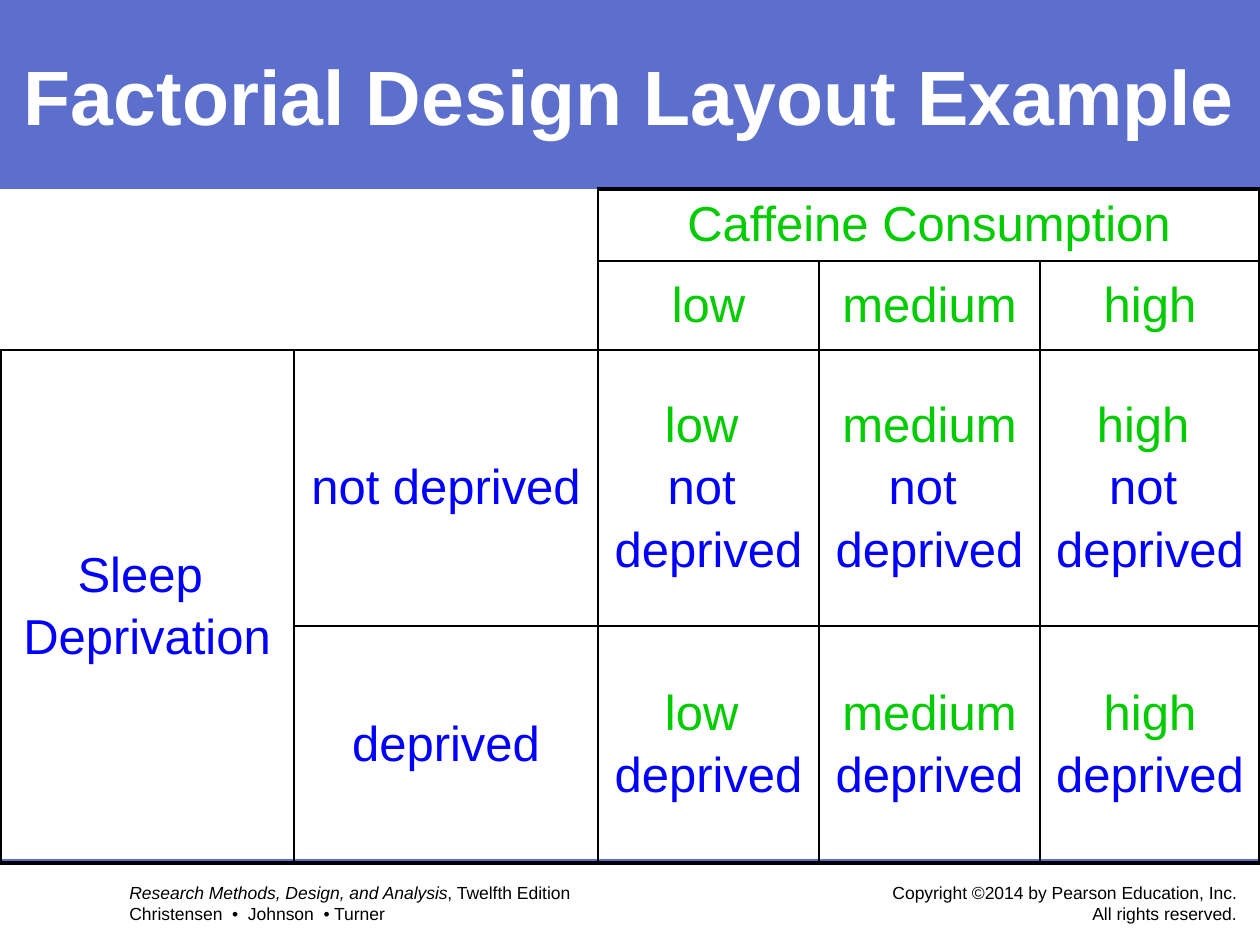
from pptx import Presentation
from pptx.dml.color import RGBColor
from pptx.enum.shapes import MSO_CONNECTOR
from pptx.enum.text import MSO_ANCHOR, MSO_AUTO_SIZE, PP_ALIGN
from pptx.oxml import parse_xml
from pptx.oxml.ns import nsdecls
from pptx.util import Pt
from lxml import etree

MIDDLE, TOP = MSO_ANCHOR.MIDDLE, MSO_ANCHOR.TOP
LEFT, CENTER, RIGHT = PP_ALIGN.LEFT, PP_ALIGN.CENTER, PP_ALIGN.RIGHT
STRAIGHT = MSO_CONNECTOR.STRAIGHT
NO_AUTOFIT = MSO_AUTO_SIZE.NONE

PX = 914400 / 126
FONT = "Arial"
BAND, WHITE, BLACK, GREEN, BLUE = "5C6FCC", "FFFFFF", "000000", "00CC00", "0000FF"
THIN, THICK = 1, 2.25

TITLE = "Factorial Design Layout Example"
BOOK = "Research Methods, Design, and Analysis"
FOOTERS = [
    ((117, 876, 650, 54), LEFT, TOP,
     [[(BOOK, True), (", Twelfth Edition", False)],
      [("Christensen  •  Johnson  • Turner", False)]]),
    ((829, 871, 420, 64), RIGHT, MIDDLE,
     [[("Copyright ©2014 by Pearson Education, Inc.", False)],
      [("All rights reserved.", False)]]),
]

COLUMNS = [294, 304, 221, 221, 220]
ROWS = [72, 89, 276, 237]
TABLE_TOP = 189
MERGES = [((0, 2), (0, 4)), ((2, 0), (3, 0))]
NOT_DEPRIVED = [("not ", BLUE), ("deprived", BLUE)]
DEPRIVED = [("deprived", BLUE)]
CELLS = [
    [[], [], [("Caffeine Consumption", GREEN)], [], []],
    [[], [], [("low", GREEN)], [("medium", GREEN)], [("high", GREEN)]],
    [[("Sleep ", BLUE), ("Deprivation", BLUE)], [("not deprived", BLUE)]]
    + [[(level, GREEN)] + NOT_DEPRIVED for level in ("low ", "medium", "high ")],
    [[], DEPRIVED]
    + [[(level, GREEN)] + DEPRIVED for level in ("low ", "medium", "high")],
]


def px(length):
    return round(length * PX)


def color(value):
    return RGBColor.from_string(value)


def style(font, size, value, bold=False, italic=False):
    font.name, font.size, font.bold, font.italic = FONT, Pt(size), bold, italic
    font.color.rgb = color(value)


def region(row, column):
    if not (0 <= row < len(ROWS) and 0 <= column < len(COLUMNS)):
        return "outside"
    if row < 2 and column < 2:
        return "blank"
    for (top, left), (bottom, right) in MERGES:
        if top <= row <= bottom and left <= column <= right:
            return top, left
    return row, column


def edge_width(here, there):
    if here == there or {here, there} == {"blank", "outside"}:
        return 0
    return THICK if there == "outside" else THIN


def set_borders(cell, row, column):
    neighbours = [
        ("lnL", row, column - 1),
        ("lnR", row, column + cell.span_width),
        ("lnT", row - 1, column),
        ("lnB", row + cell.span_height, column),
    ]
    properties = cell._tc.get_or_add_tcPr()
    for index, (tag, next_row, next_column) in enumerate(neighbours):
        width = edge_width(region(row, column), region(next_row, next_column))
        paint = (f'<a:solidFill><a:srgbClr val="{BLACK}"/></a:solidFill>'
                 if width else "<a:noFill/>")
        properties.insert(index, parse_xml(
            f'<a:{tag} {nsdecls("a")} w="{Pt(width)}">{paint}</a:{tag}>'))


def add_title(slide):
    title = slide.shapes.title
    title.left, title.top, title.width, title.height = 0, 0, px(1260), px(189)
    title.fill.solid()
    title.fill.fore_color.rgb = color(BAND)
    frame = title.text_frame
    frame.text = TITLE
    frame.word_wrap = True
    frame.auto_size = NO_AUTOFIT
    frame.vertical_anchor = MIDDLE
    frame.paragraphs[0].alignment = CENTER
    style(frame.paragraphs[0].runs[0].font, 44, WHITE, bold=True)


def add_footer(slide, box, alignment, anchor, lines):
    frame = slide.shapes.add_textbox(*map(px, box)).text_frame
    frame.word_wrap = True
    frame.vertical_anchor = anchor
    for index, line in enumerate(lines):
        paragraph = frame.add_paragraph() if index else frame.paragraphs[0]
        paragraph.alignment = alignment
        for text, italic in line:
            run = paragraph.add_run()
            run.text = text
            style(run.font, 10, BLACK, italic=italic)


def add_footer_rule(slide):
    rule = slide.shapes.add_connector(STRAIGHT, 0, px(861), px(1260), px(861))
    rule.line.color.rgb = color(BAND)
    rule.line.width = Pt(THICK)
    properties = rule._element.spPr
    etree.SubElement(properties, "{http://schemas.openxmlformats.org/drawingml/2006/main}effectLst")


def fill_cell(cell, lines):
    cell.fill.background()
    cell.vertical_anchor = MIDDLE
    frame = cell.text_frame
    frame.text = "\n".join(text for text, _ in lines)
    for index, (paragraph, (_, value)) in enumerate(zip(frame.paragraphs, lines)):
        paragraph.alignment = CENTER
        paragraph.space_before = Pt(4.7 if index else 0)
        style(paragraph.runs[0].font, 28, value)


def add_design_table(slide):
    table = slide.shapes.add_table(
        len(ROWS), len(COLUMNS), 0, px(TABLE_TOP), px(sum(COLUMNS)), px(sum(ROWS))).table
    table.first_row = table.horz_banding = False
    for column, width in zip(table.columns, COLUMNS):
        column.width = px(width)
    for row, height in zip(table.rows, ROWS):
        row.height = px(height)
    for first, last in MERGES:
        table.cell(*first).merge(table.cell(*last))
    for row, contents in enumerate(CELLS):
        for column, lines in enumerate(contents):
            cell = table.cell(row, column)
            fill_cell(cell, lines)
            set_borders(cell, row, column)


def main():
    presentation = Presentation()
    presentation.slide_width, presentation.slide_height = px(1260), px(945)
    slide = presentation.slides.add_slide(presentation.slide_layouts[5])
    add_title(slide)
    for footer in FOOTERS:
        add_footer(slide, *footer)
    add_footer_rule(slide)
    add_design_table(slide)
    presentation.save("out.pptx")


if __name__ == "__main__":
    main()
